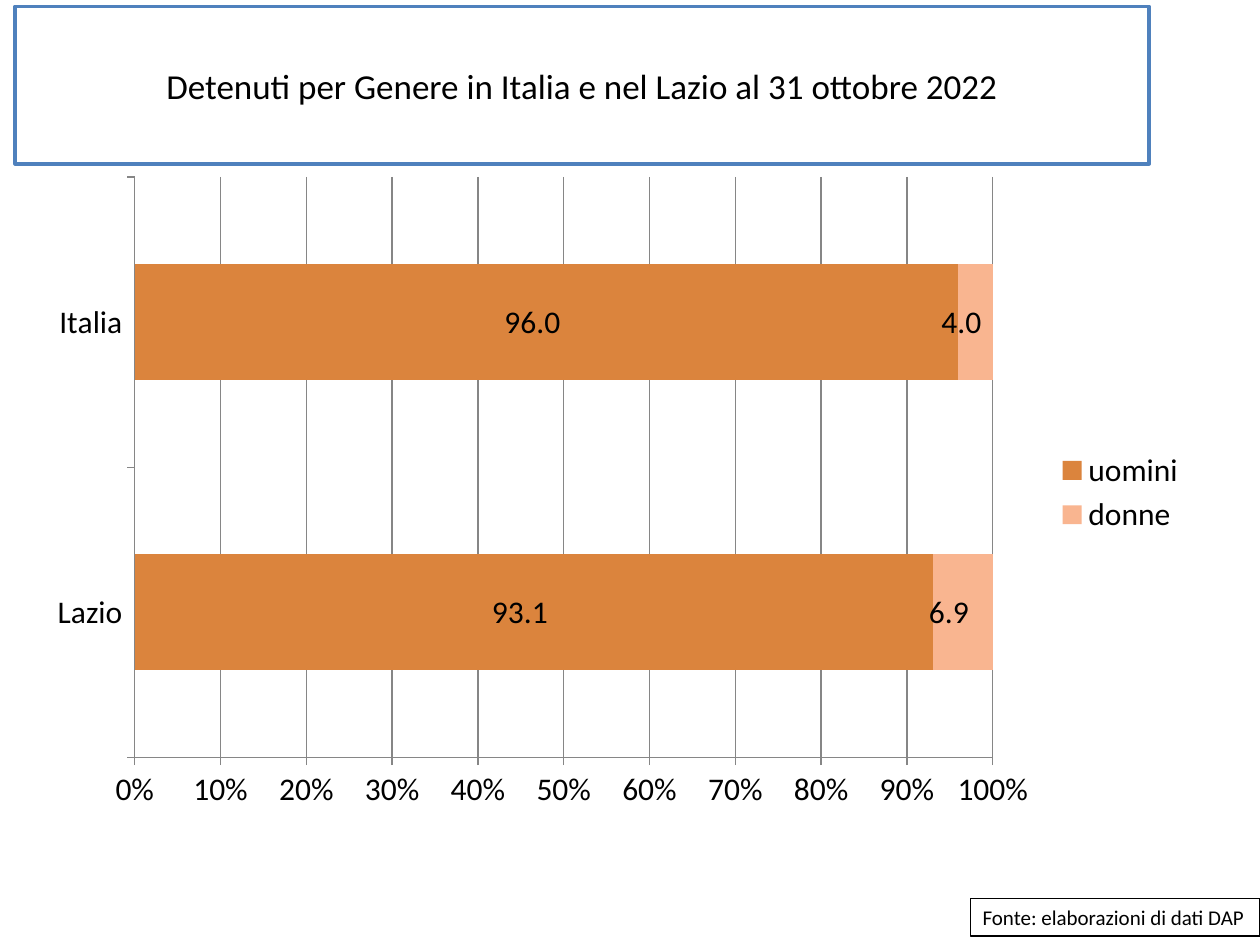
from lxml import etree
from pptx import Presentation
from pptx import util as u
from pptx.chart.data import CategoryChartData
from pptx.dml.color import RGBColor
from pptx.enum import chart as ch, shapes, text
from pptx.oxml.ns import qn

BLACK = RGBColor(0, 0, 0)
WHITE = RGBColor(255, 255, 255)
GREY = RGBColor(0x86, 0x86, 0x86)
BLUE = RGBColor(0x4F, 0x81, 0xBD)
ORANGE = RGBColor(0xDB, 0x84, 0x3D)
PEACH = RGBColor(0xF9, 0xB5, 0x90)
FONT = "Calibri"

CATEGORIES = ["Lazio", "Italia"]
SERIES = [("uomini ", (93.1, 96.0), ORANGE), ("donne", (6.9, 4.0), PEACH)]
LABEL_FORMAT = "#,##0.0\\ _€_-"
# Inner plot area as shares of the chart frame
PLOT = {"x": 0.085, "y": 0.02, "w": 0.733, "h": 0.883}


def set_font(font, size):
    font.name, font.size = FONT, u.Pt(size)
    font.color.rgb = BLACK


def frame_text(s, words, size, line, width, align):
    """White framed box with one line of text."""
    s.fill.solid()
    s.fill.fore_color.rgb = WHITE
    s.line.color.rgb = line
    s.line.width = u.Pt(width)
    tf = s.text_frame
    tf.text = words
    p = tf.paragraphs[0]
    p.alignment = align
    set_font(p.runs[0].font, size)
    return tf


def add_title(slide, box):
    s = slide.shapes.title
    s.left, s.top, s.width, s.height = box
    tf = frame_text(s, "Detenuti per Genere in Italia e nel Lazio al 31 ottobre 2022",
                    20, BLUE, 2, text.PP_ALIGN.CENTER)
    tf.vertical_anchor = text.MSO_ANCHOR.MIDDLE


def add_source(slide, box):
    s = slide.shapes.add_shape(shapes.MSO_SHAPE.RECTANGLE, *box)
    s.shadow.inherit = False
    tf = frame_text(s, "Fonte: elaborazioni di dati DAP", 12, BLACK, 0.75,
                    text.PP_ALIGN.LEFT)
    tf.word_wrap = False
    tf.vertical_anchor = text.MSO_ANCHOR.TOP
    tf.auto_size = text.MSO_AUTO_SIZE.SHAPE_TO_FIT_TEXT


def place_plot(chart):
    """Fix the inner plot area inside the chart frame."""
    area = chart._chartSpace.chart.plotArea
    for old in area.findall(qn("c:layout")):
        area.remove(old)
    layout = etree.Element(qn("c:layout"))
    area.insert(0, layout)
    manual = etree.SubElement(layout, qn("c:manualLayout"))
    parts = [("layoutTarget", "inner"), ("xMode", "edge"), ("yMode", "edge")]
    for tag, val in parts + list(PLOT.items()):
        etree.SubElement(manual, qn("c:" + tag)).set("val", str(val))


def add_gender_chart(slide, box):
    data = CategoryChartData()
    data.categories = CATEGORIES
    for name, values, _ in SERIES:
        data.add_series(name, values)
    chart = slide.shapes.add_chart(ch.XL_CHART_TYPE.BAR_STACKED_100, *box, data).chart
    set_font(chart.font, 18)
    chart.has_title = False
    place_plot(chart)

    # Bars and labels
    plot = chart.plots[0]
    plot.gap_width, plot.overlap = 150, 100
    plot.vary_by_categories = False
    for series, (_, _, color) in zip(plot.series, SERIES):
        series.format.fill.solid()
        series.format.fill.fore_color.rgb = color
        labels = series.data_labels
        labels.show_value = True
        labels.number_format = LABEL_FORMAT
        labels.number_format_is_linked = False
        labels.position = ch.XL_LABEL_POSITION.CENTER
        set_font(labels.font, 18)

    # Axes
    values = chart.value_axis
    values.minimum_scale, values.maximum_scale, values.major_unit = 0, 1, 0.1
    values.has_major_gridlines = True
    values.tick_labels.number_format = "0%"
    values.tick_labels.number_format_is_linked = False
    for axis in (values, chart.category_axis):
        axis.major_tick_mark = ch.XL_TICK_MARK.OUTSIDE
        set_font(axis.tick_labels.font, 18)
    for part in (values, chart.category_axis, values.major_gridlines):
        part.format.line.color.rgb = GREY
        part.format.line.width = u.Pt(0.75)

    # Legend
    chart.has_legend = True
    chart.legend.position = ch.XL_LEGEND_POSITION.RIGHT
    chart.legend.include_in_layout = False
    set_font(chart.legend.font, 18)


def main():
    prs = Presentation()
    prs.slide_width, prs.slide_height = u.Inches(10), u.Inches(7.5)
    slide = prs.slides.add_slide(prs.slide_layouts[5])

    def box(*inches):
        return [u.Inches(n) for n in inches]

    add_title(slide, box(0.12, 0.05, 9, 1.25))
    add_source(slide, box(7.7, 7.13, 2.3, 0.3))
    add_gender_chart(slide, box(0.28, 1.3, 9.29, 5.22))
    prs.save("out.pptx")


if __name__ == "__main__":
    main()
